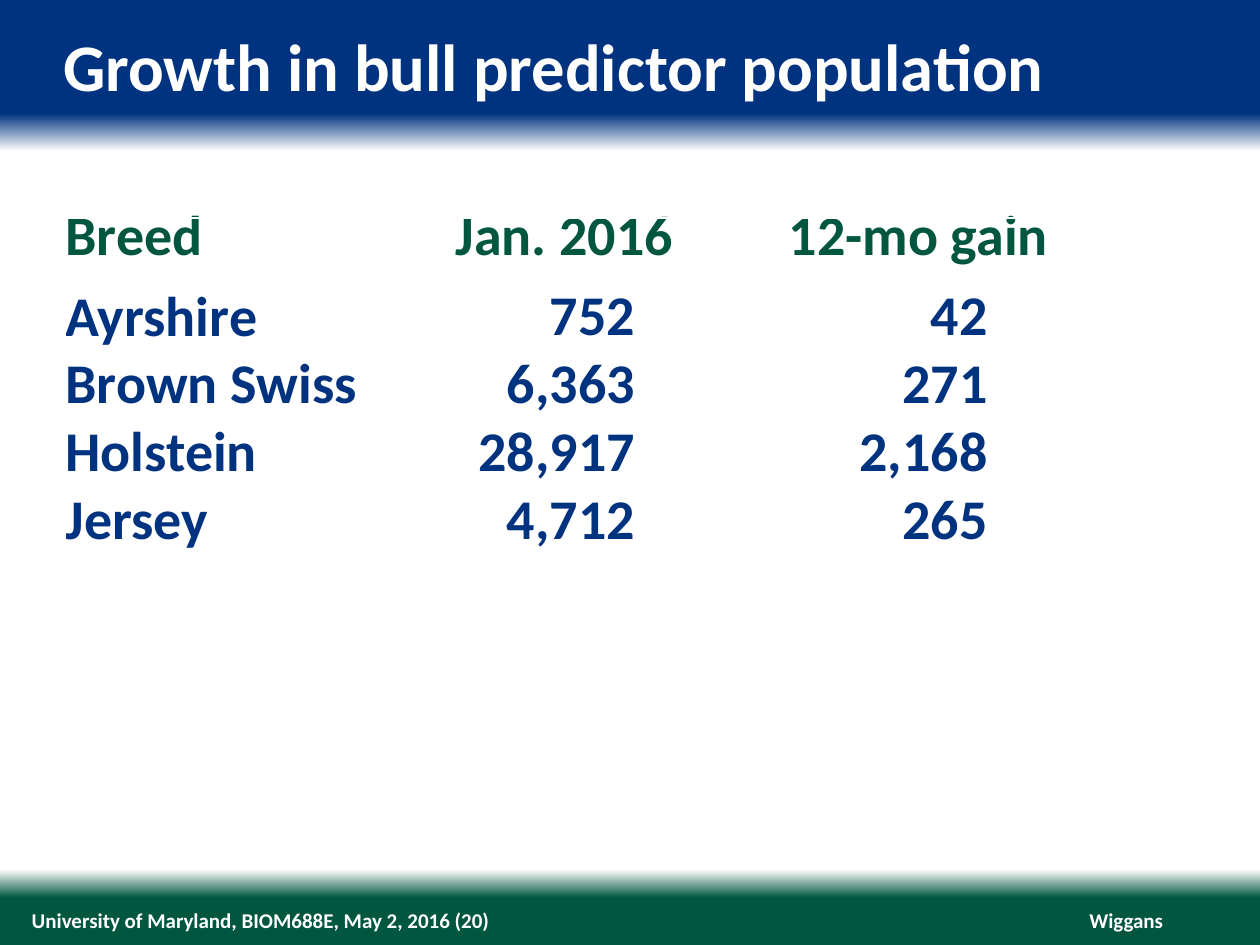
import dataclasses

import pptx
import pptx.dml.color
import pptx.enum.text
import pptx.oxml
import pptx.oxml.ns
import pptx.util
from lxml import etree

Cm = pptx.util.Cm
Pt = pptx.util.Pt
ALIGN = pptx.enum.text.PP_ALIGN
ANCHOR = pptx.enum.text.MSO_ANCHOR
qn = pptx.oxml.ns.qn

HUES = {"blue": "00337F", "green": "00563F", "white": "FFFFFF"}
FADE = [(0, "blue"), (12, "blue"), (16, "white"),
        (92, "white"), (95, "green"), (100, "green")]


@dataclasses.dataclass
class Column:
    width: float
    align: ALIGN
    head_align: ALIGN
    right: float
    head_right: float


@dataclasses.dataclass
class Note:
    text: str
    left: float
    width: float
    align: ALIGN
    wrap: bool


COLS = [
    Column(5.97, ALIGN.LEFT, ALIGN.LEFT, 0, 0),
    Column(8.56, ALIGN.RIGHT, ALIGN.CENTER, 3.05, 0.38),
    Column(5.33, ALIGN.RIGHT, ALIGN.CENTER, 1.27, 0),
]
ROWS = [
    ("Breed", "Jan. 2016", "12-mo gain"),
    ("Ayrshire", "752", "42"),
    ("Brown Swiss", "6,363", "271"),
    ("Holstein", "28,917", "2,168"),
    ("Jersey", "4,712", "265"),
]
NOTES = [
    Note("Wiggans", 21.95, 1.5, ALIGN.RIGHT, False),
    Note("University of Maryland, BIOM688E, May 2, 2016 (20)",
         0.64, 18.85, ALIGN.LEFT, True),
]
HEAD, LINE, GAP = 1.06, 1.37, 0.25


def style(para, size: float, hue: str, align: ALIGN) -> None:
    para.alignment = align
    font = para.font
    font.name, font.size, font.bold = "Calibri", Pt(size), True
    font.color.rgb = pptx.dml.color.RGBColor.from_string(HUES[hue])


def inset(item, right: float = 0, top: float = 0) -> None:
    item.margin_left = item.margin_bottom = 0
    item.margin_right, item.margin_top = Cm(right), Cm(top)


def paint(slide) -> None:
    """Fill the background with the bands of FADE, top to bottom."""
    fill = slide.background.fill
    fill.gradient()
    fill.gradient_angle = 270
    stops = slide.element.find(".//" + qn("a:gsLst"))
    for stop in list(stops):
        stops.remove(stop)
    for place, hue in FADE:
        stop = etree.SubElement(stops, qn("a:gs"), pos=str(place * 1000))
        etree.SubElement(stop, qn("a:srgbClr"), val=HUES[hue])


def add_note(slide, note: Note) -> None:
    box = slide.shapes.add_textbox(Cm(note.left), Cm(18.29), Cm(note.width), Cm(0.51))
    frame = box.text_frame
    inset(frame)
    frame.word_wrap = note.wrap
    frame.vertical_anchor = ANCHOR.MIDDLE
    frame.text = note.text
    style(frame.paragraphs[0], 12, "white", note.align)


def add_title(slide, text: str) -> None:
    title = slide.shapes.title
    title.left, title.top = Cm(1.27), Cm(0.51)
    title.width, title.height = Cm(22.86), Cm(1.63)
    frame = title.text_frame
    inset(frame)
    frame.auto_size = pptx.enum.text.MSO_AUTO_SIZE.NONE
    frame.vertical_anchor = ANCHOR.TOP
    frame.text = text
    style(frame.paragraphs[0], 38, "white", ALIGN.LEFT)


def add_breeds(slide) -> None:
    tall = [HEAD, LINE + GAP] + [LINE] * (len(ROWS) - 2)
    wide = sum(col.width for col in COLS)
    table = slide.shapes.add_table(len(ROWS), len(COLS), Cm(1.32), Cm(4.39),
                                   Cm(wide), Cm(sum(tall))).table
    table.first_row = table.horz_banding = False
    for col, spec in zip(table.columns, COLS):
        col.width = Cm(spec.width)
    for i, words in enumerate(ROWS):
        table.rows[i].height = Cm(tall[i])
        head = i == 0
        for j, (word, col) in enumerate(zip(words, COLS)):
            cell = table.cell(i, j)
            cell.fill.background()
            cell.vertical_anchor = ANCHOR.BOTTOM
            inset(cell, col.head_right if head else col.right,
                  GAP if i == 1 and j == 0 else 0)
            cell.text = word
            para = cell.text_frame.paragraphs[0]
            if head:
                para.line_spacing = Pt(30)
            style(para, 32, "green" if head else "blue",
                  col.head_align if head else col.align)


def main() -> None:
    deck = pptx.Presentation()
    deck.slide_width, deck.slide_height = Cm(25.4), Cm(19.05)
    slide = deck.slides.add_slide(deck.slide_layouts[5])
    paint(slide)
    for note in NOTES:
        add_note(slide, note)
    add_title(slide, "Growth in bull predictor population")
    add_breeds(slide)
    deck.save("out.pptx")


if __name__ == "__main__":
    main()
